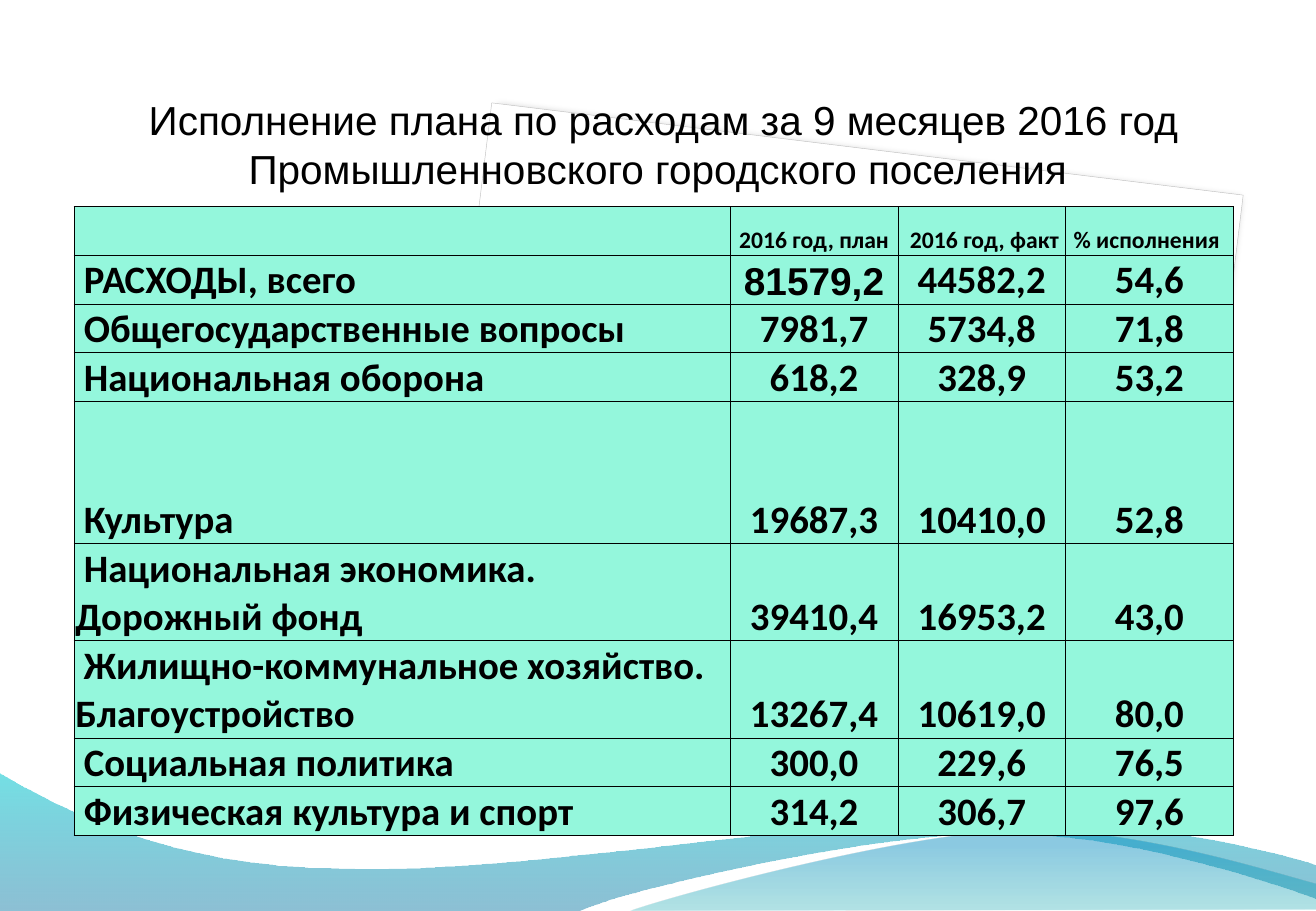
import pptx
import pptx.util
import pptx.dml.color
import pptx.enum.shapes
import pptx.enum.text
import pptx.oxml.ns
from lxml import etree
from pptx.util import Inches

COLORS = {
    "text": "000000", "cell": "94F7DC", "border": "000000",
    "paper": "FFFFFF", "paper_edge": "C0C0C0", "shadow": "000000",
    "blue": "0074A1", "cyan": "00C6CF", "teal": "00A1A9", "sky": "008BBF",
}
ALIGN = pptx.enum.text.PP_ALIGN
ANCHOR = pptx.enum.text.MSO_ANCHOR
SHAPE = pptx.enum.shapes.MSO_SHAPE

TITLE = "Исполнение плана по расходам за 9 месяцев 2016 год Промышленновского городского поселения "
HEADER = ["", "2016 год, план", " 2016 год, факт", "% исполнения "]
EXPENSES = [
    ["РАСХОДЫ, всего", "81579,2", "44582,2", "54,6"],
    ["Общегосударственные вопросы", "7981,7", "5734,8", "71,8"],
    ["Национальная оборона", "618,2", "328,9", "53,2"],
    ["Культура", "19687,3", "10410,0", "52,8"],
    ["Национальная экономика. Дорожный фонд", "39410,4", "16953,2", "43,0"],
    ["Жилищно-коммунальное хозяйство. Благоустройство", "13267,4", "10619,0", "80,0"],
    ["Социальная политика", "300,0", "229,6", "76,5"],
    ["Физическая культура и спорт", "314,2", "306,7", "97,6"],
]
COL_WIDTHS = [5.4, 1.38, 1.38, 1.38]
ROW_HEIGHTS = [0.4, 0.4, 0.4, 0.4, 1.17, 0.8, 0.8, 0.4, 0.4]

BACK_WAVE = [
    [(0, 7.5)], [(4.77, 7.5)],
    [(5.15, 7.32), (7.19, 6.86), (8.22, 6.86)],
    [(9.24, 6.86), (10.38, 7.24), (10.83, 7.4)],
    [(10.85, 7.13)],
    [(10.65, 7.05), (9.42, 6.73), (8.08, 6.74)],
    [(6.74, 6.74), (4.14, 7.21), (2.79, 7.15)],
    [(1.4, 7.14), (0.5, 6.66), (-0.01, 6.36)],
]
FRONT_WAVE = [
    [(5.19, 7.5)],
    [(5.52, 7.38), (7.39, 6.87), (8.33, 6.84)],
    [(9.27, 6.8), (10.42, 7.17), (10.83, 7.28)],
    [(10.83, 7.49)],
]


def rgb(name):
    return pptx.dml.color.RGBColor.from_string(COLORS[name])


def sub(parent, tag, **attrs):
    return etree.SubElement(parent, pptx.oxml.ns.qn(tag), attrs)


def set_attrs(obj, values):
    for name, value in values.items():
        setattr(obj, name, value)


def write(p, text, size, font="Calibri", bold=False, align=ALIGN.CENTER):
    p.alignment = align
    r = p.add_run()
    r.text = text
    set_attrs(r.font, {"size": pptx.util.Pt(size), "name": font, "bold": bold})
    r.font.color.rgb = rgb("text")


def bend_segments(sp, segments):
    left = min(seg[-1][0] for seg in segments)
    top = min(seg[-1][1] for seg in segments)
    lines = list(sp._element.spPr.iter(pptx.oxml.ns.qn("a:lnTo")))
    for line, seg in zip(lines, segments[1:]):
        if len(seg) == 3:
            line.tag = pptx.oxml.ns.qn("a:cubicBezTo")
            line.remove(line[0])
            for x, y in seg:
                sub(line, "a:pt", x=str(round((x - left) * 100)), y=str(round((y - top) * 100)))


def add_wave(s, segments, stops):
    points = [(round(seg[-1][0] * 100), round(seg[-1][1] * 100)) for seg in segments]
    builder = s.shapes.build_freeform(*points[0], scale=Inches(0.01))
    builder.add_line_segments(points[1:], close=True)
    sp = builder.convert_to_shape()
    bend_segments(sp, segments)
    sp.shadow.inherit = False
    sp.line.fill.background()
    sp.fill.gradient()
    sp.fill.gradient_angle = 90
    for stop, (position, color, _) in zip(sp.fill.gradient_stops, stops):
        stop.position = position
        stop.color.rgb = rgb(color)
    for clr, (_, _, opacity) in zip(sp._element.spPr.iter(pptx.oxml.ns.qn("a:srgbClr")), stops):
        sub(clr, "a:alpha", val=str(opacity * 1000))


def add_paper(s, kind, box, edge, width, opacity, **shadow_attrs):
    sp = s.shapes.add_shape(kind, *map(Inches, box))
    sp.rotation = 7
    sp._element.spPr.find(pptx.oxml.ns.qn("a:xfrm")).set("flipV", "1")
    sp.fill.solid()
    sp.fill.fore_color.rgb = rgb("paper")
    sp.line.color.rgb = rgb(edge)
    sp.line.width = pptx.util.Pt(width)
    sp.shadow.inherit = False
    effects = sp._element.spPr.find(pptx.oxml.ns.qn("a:effectLst"))
    shadow = sub(effects, "a:outerShdw", algn="tl", rotWithShape="0", **shadow_attrs)
    sub(sub(shadow, "a:srgbClr", val=COLORS["shadow"]), "a:alpha", val=str(opacity * 1000))
    return sp


def style_cell(cell):
    set_attrs(cell, {
        "margin_left": Inches(0.01), "margin_right": Inches(0.01),
        "margin_top": Inches(0.01), "margin_bottom": 0,
        "vertical_anchor": ANCHOR.BOTTOM,
    })
    tcPr = cell._tc.get_or_add_tcPr()
    for side in ("a:lnL", "a:lnR", "a:lnT", "a:lnB"):
        ln = sub(tcPr, side, w=str(pptx.util.Pt(0.5)))
        sub(sub(ln, "a:solidFill"), "a:srgbClr", val=COLORS["border"])
    cell.fill.solid()
    cell.fill.fore_color.rgb = rgb("cell")


def add_expense_table(s):
    rows = [HEADER] + EXPENSES
    frame = s.shapes.add_table(len(rows), len(HEADER), Inches(0.61), Inches(1.7),
                               Inches(sum(COL_WIDTHS)), Inches(sum(ROW_HEIGHTS)))
    table = frame.table
    set_attrs(table, {"first_row": False, "horz_banding": False})
    for col, width in zip(table.columns, COL_WIDTHS):
        col.width = Inches(width)
    for row, height in zip(table.rows, ROW_HEIGHTS):
        row.height = Inches(height)
    for i, values in enumerate(rows):
        for j, text in enumerate(values):
            cell = table.cell(i, j)
            style_cell(cell)
            if not text:
                continue
            p = cell.text_frame.paragraphs[0]
            if j == 0:
                p._p.get_or_add_pPr().set("indent", str(Inches(0.07)))
            write(p, text, 23 if i else 14,
                  font="Arial" if (i, j) == (1, 1) else "Calibri", bold=True,
                  align=ALIGN.CENTER if j else ALIGN.LEFT)


def add_title(s):
    sp = s.shapes.add_textbox(Inches(1.01), Inches(0.73), Inches(8.9), Inches(0.91))
    tf = sp.text_frame
    set_attrs(tf, {"word_wrap": True, "vertical_anchor": ANCHOR.MIDDLE})
    write(tf.paragraphs[0], TITLE, 24, font="Arial")


def main():
    prs = pptx.Presentation()
    set_attrs(prs, {"slide_width": Inches(10.83), "slide_height": Inches(7.5)})
    s = prs.slides.add_slide(prs.slide_layouts[6])
    sheet = add_paper(s, SHAPE.SNIP_ROUND_RECTANGLE, (3.75, 1.21, 6.23, 4.5), "paper_edge", 0.25, 25,
                      blurRad="63500", dist="38100", dir="7500000",
                      sx="98500", sy="100080", kx="100000")
    sheet.adjustments[0], sheet.adjustments[1] = 0, 0.036
    add_paper(s, SHAPE.RIGHT_TRIANGLE, (9.48, 5.86, 0.18, 0.17), "paper", 1, 47,
              blurRad="20320", dist="6350", dir="12900000")
    add_wave(s, BACK_WAVE, [(0, "blue", 45), (1, "cyan", 55)])
    add_wave(s, FRONT_WAVE, [(0, "teal", 30), (0.8, "sky", 45)])
    add_expense_table(s)
    add_title(s)
    prs.save("out.pptx")


if __name__ == "__main__":
    main()
